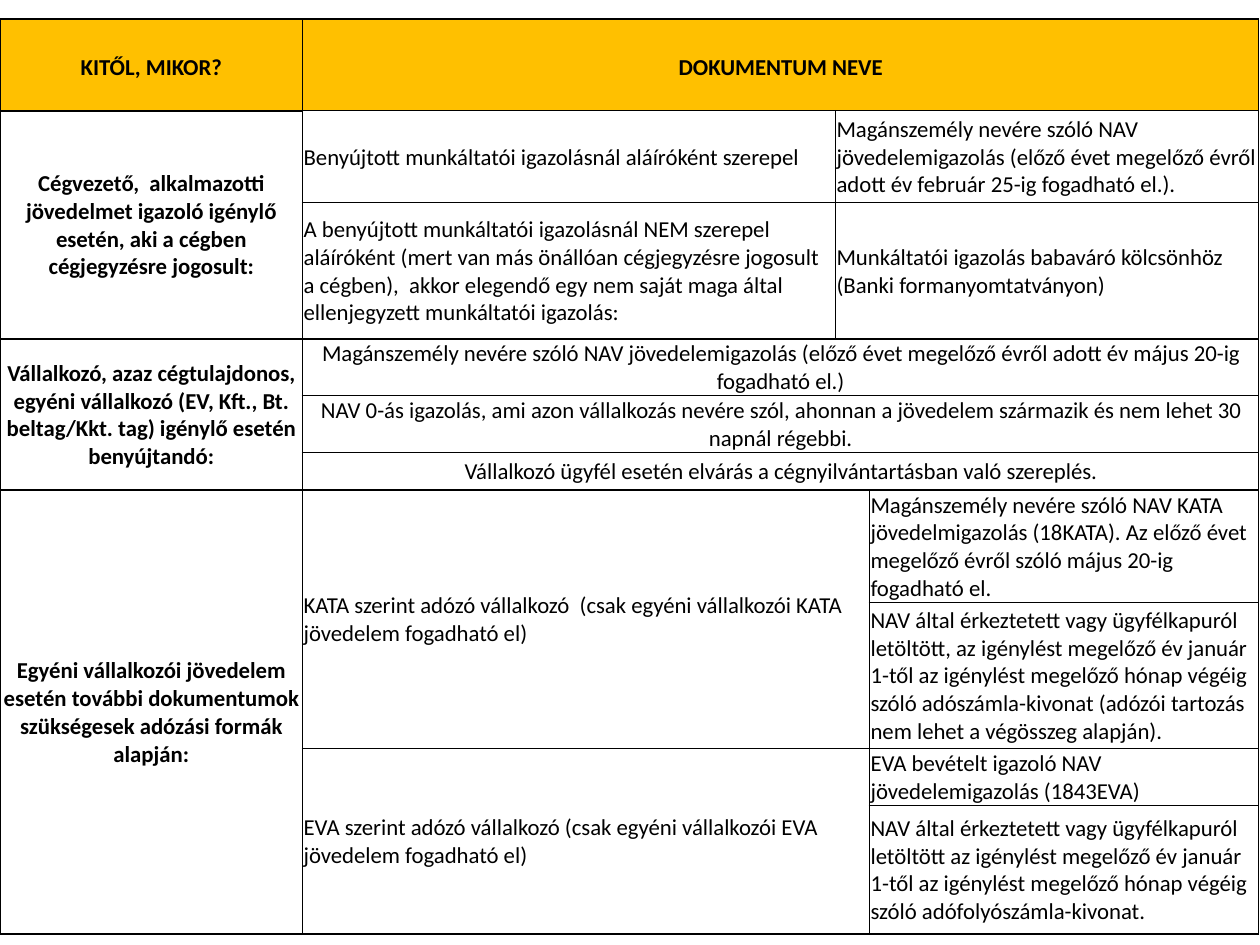
from pptx import Presentation
from pptx.dml.color import RGBColor
from pptx.enum.text import MSO_ANCHOR, PP_ALIGN
from pptx.oxml.ns import qn
from pptx.util import Inches, Pt
from lxml import etree

MIDDLE = MSO_ANCHOR.MIDDLE
LEFT, CENTER = PP_ALIGN.LEFT, PP_ALIGN.CENTER
BLACK = RGBColor(0x00, 0x00, 0x00)
AMBER = RGBColor(0xFF, 0xC0, 0x00)
FONT = "Calibri"
THICK, THIN = 1, 0.5  # border widths in points

COLUMN_WIDTHS = [2.4, 4.23, 0.27, 3.09]
ROW_HEIGHTS = [0.73, 0.73, 1.08, 0.44, 0.44, 0.3, 0.87, 1.16, 0.44, 1.02]

# row, column, row span, column span, text, sides with a thin border
HEADERS = [
    (0, 0, 1, 1, "KITŐL, MIKOR?", ""),
    (0, 1, 1, 3, "DOKUMENTUM NEVE", "RB"),
]
APPLICANTS = [
    (1, 0, 2, 1, "Cégvezető,  alkalmazotti jövedelmet igazoló igénylő esetén, "
     "aki a cégben cégjegyzésre jogosult:", ""),
    (3, 0, 3, 1, "Vállalkozó, azaz cégtulajdonos, egyéni vállalkozó (EV, Kft., Bt. "
     "beltag/Kkt. tag) igénylő esetén benyújtandó:", ""),
    (6, 0, 4, 1, "Egyéni vállalkozói jövedelem esetén további dokumentumok "
     "szükségesek adózási formák alapján:", ""),
]
ENTREPRENEUR_DOCUMENTS = [
    (3, 1, 1, 3, "Magánszemély nevére szóló NAV jövedelemigazolás (előző évet "
     "megelőző évről adott év május 20-ig fogadható el.)", "B"),
    (4, 1, 1, 3, "NAV 0-ás igazolás, ami azon vállalkozás nevére szól, ahonnan a "
     "jövedelem származik és nem lehet 30 napnál régebbi.", "TB"),
    (5, 1, 1, 3, "Vállalkozó ügyfél esetén elvárás a cégnyilvántartásban való "
     "szereplés.", "T"),
]
CASES_AND_DOCUMENTS = [
    (1, 1, 1, 1, "Benyújtott munkáltatói igazolásnál aláíróként szerepel", "TRB"),
    (1, 2, 1, 2, "Magánszemély nevére szóló NAV jövedelemigazolás (előző évet "
     "megelőző évről adott év február 25-ig fogadható el.).", "LTB"),
    (2, 1, 1, 1, "A benyújtott munkáltatói igazolásnál NEM szerepel aláíróként "
     "(mert van más önállóan cégjegyzésre jogosult a cégben),  akkor elegendő egy "
     "nem saját maga által ellenjegyzett munkáltatói igazolás:", "TR"),
    (2, 2, 1, 2, "Munkáltatói igazolás babaváró kölcsönhöz (Banki "
     "formanyomtatványon)", "LT"),
    (6, 1, 2, 2, "KATA szerint adózó vállalkozó  (csak egyéni vállalkozói KATA "
     "jövedelem fogadható el)", ""),
    (6, 3, 1, 1, "Magánszemély nevére szóló NAV KATA jövedelmigazolás (18KATA). Az "
     "előző évet megelőző évről szóló május 20-ig fogadható el.", "B"),
    (7, 3, 1, 1, "NAV által érkeztetett vagy ügyfélkapuról letöltött, az igénylést "
     "megelőző év január 1-től az igénylést megelőző hónap végéig szóló "
     "adószámla-kivonat (adózói tartozás nem lehet a végösszeg alapján).", "TB"),
    (8, 1, 2, 2, "EVA szerint adózó vállalkozó (csak egyéni vállalkozói EVA "
     "jövedelem fogadható el)", ""),
    (8, 3, 1, 1, "EVA bevételt igazoló NAV jövedelemigazolás (1843EVA)", "TB"),
    (9, 3, 1, 1, "NAV által érkeztetett vagy ügyfélkapuról letöltött az igénylést "
     "megelőző év január 1-től az igénylést megelőző hónap végéig szóló "
     "adófolyószámla-kivonat.", "T"),
]


def set_borders(cell, thin_sides):
    properties = cell._tc.get_or_add_tcPr()
    for side in "LRTB":
        width = THIN if side in thin_sides else THICK
        line = etree.SubElement(properties, qn(f"a:ln{side}"), w=str(Pt(width)))
        fill = etree.SubElement(line, qn("a:solidFill"))
        etree.SubElement(fill, qn("a:srgbClr"), val=str(BLACK))


def write_text(cell, text, bold=False, align=LEFT, line_spacing=None):
    cell.vertical_anchor = MIDDLE
    cell.margin_left = cell.margin_right = cell.margin_top = Inches(0.01)
    cell.margin_bottom = 0
    paragraph = cell.text_frame.paragraphs[0]
    paragraph.alignment = align
    if line_spacing:
        paragraph.line_spacing = line_spacing
    run = paragraph.add_run()
    run.text = text
    run.font.name = FONT
    run.font.size = Pt(13)
    run.font.bold = bold
    run.font.color.rgb = BLACK


def fill_cells(table, entries, color=None, **text_format):
    for row, column, row_span, column_span, text, thin_sides in entries:
        origin = table.cell(row, column)
        if row_span * column_span > 1:
            origin.merge(table.cell(row + row_span - 1, column + column_span - 1))
        for r in range(row, row + row_span):
            for c in range(column, column + column_span):
                cell = table.cell(r, c)
                set_borders(cell, thin_sides)
                if color is None:
                    cell.fill.background()
                else:
                    cell.fill.solid()
                    cell.fill.fore_color.rgb = color
        write_text(origin, text, **text_format)


def add_grid(slide):
    table = slide.shapes.add_table(
        len(ROW_HEIGHTS), len(COLUMN_WIDTHS), 0, Inches(0.15),
        Inches(sum(COLUMN_WIDTHS)), Inches(sum(ROW_HEIGHTS))).table
    table.first_row = table.horz_banding = False
    for column, width in zip(table.columns, COLUMN_WIDTHS):
        column.width = Inches(width)
    for row, height in zip(table.rows, ROW_HEIGHTS):
        row.height = Inches(height)
    return table


def main():
    presentation = Presentation()
    presentation.slide_width = Inches(10)
    presentation.slide_height = Inches(7.5)
    slide = presentation.slides.add_slide(presentation.slide_layouts[6])

    # Required documents by applicant type
    table = add_grid(slide)
    fill_cells(table, HEADERS, color=AMBER, bold=True, align=CENTER,
               line_spacing=1.15)
    fill_cells(table, APPLICANTS, bold=True, align=CENTER)
    fill_cells(table, ENTREPRENEUR_DOCUMENTS, align=CENTER)
    fill_cells(table, CASES_AND_DOCUMENTS)

    presentation.save("out.pptx")


if __name__ == "__main__":
    main()
